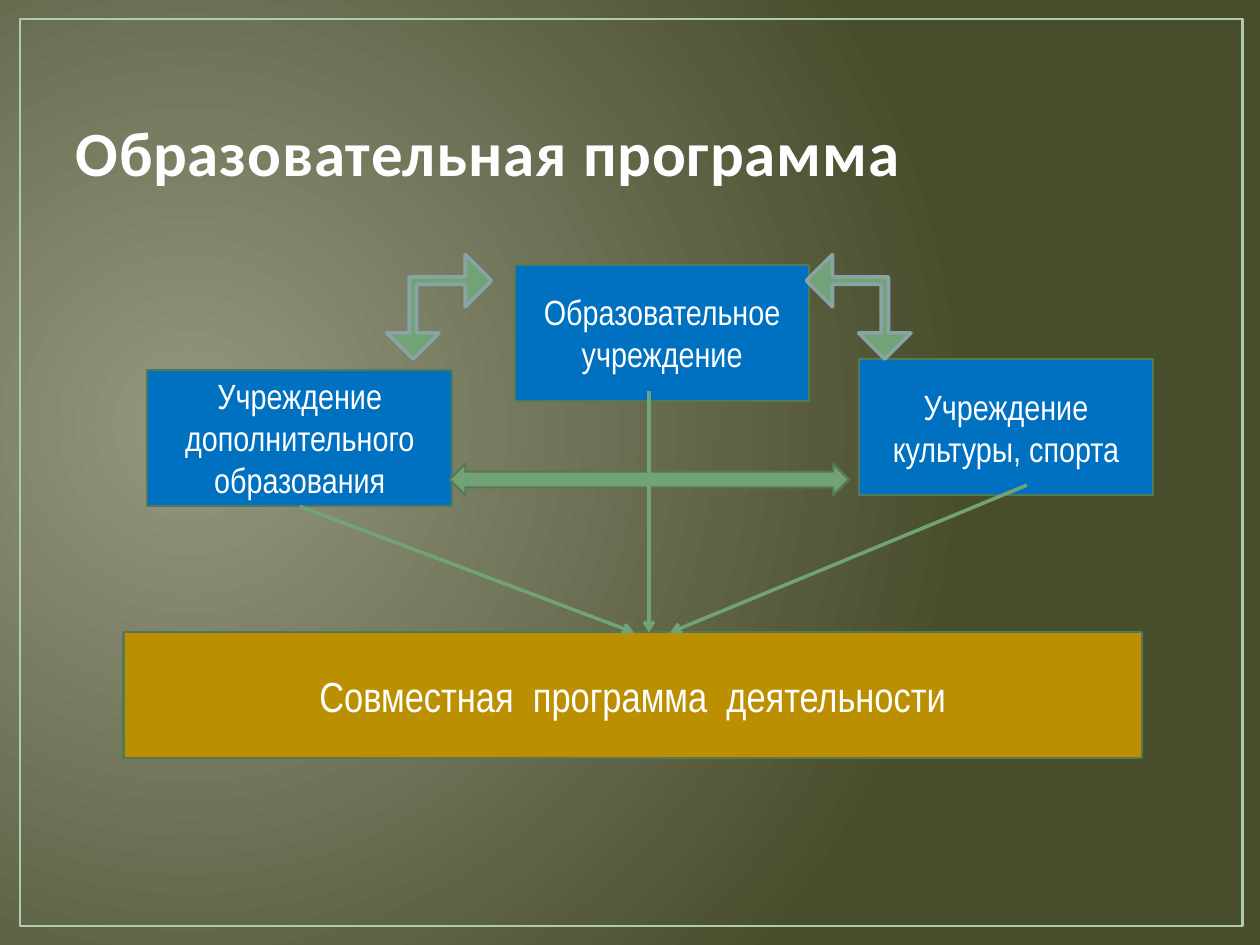
from lxml.etree import SubElement
from pptx import Presentation
from pptx.dml.color import RGBColor
from pptx.enum.shapes import MSO_CONNECTOR, MSO_SHAPE
from pptx.enum.text import MSO_ANCHOR, MSO_AUTO_SIZE, PP_ALIGN
from pptx.oxml import parse_xml
from pptx.oxml.ns import nsdecls, qn
from pptx.util import Pt

WHITE = RGBColor(0xFF, 0xFF, 0xFF)
SNOW = RGBColor(0xFF, 0xFE, 0xFE)
BLUE = RGBColor(0x00, 0x70, 0xC0)
GOLD = RGBColor(0xBC, 0x8F, 0x00)
GREEN = RGBColor(0x72, 0xA3, 0x76)
EDGE = RGBColor(0x54, 0x79, 0x57)
STEEL = RGBColor(0x89, 0xA4, 0xA7)
MINT = RGBColor(0xB0, 0xCC, 0xB0)

TITLE = "Образовательная программа"
# text, (left, top, width, height), fill, text size
BOXES = [
    ("Образовательное учреждение", (294.5, 151.2, 167.8, 77.8), BLUE, 20),
    ("Учреждение культуры, спорта", (491, 205.2, 167.8, 77.8), BLUE, 20),
    ("Учреждение дополнительного образования", (84.2, 211.3, 174.2, 77.8), BLUE, 20),
    ("Совместная  программа  деятельности", (70.6, 361.4, 581.8, 72), GOLD, 24),
]
# left, rotation
ELBOWS = [(460.8, 270), (221, 180)]
ELBOW_TOP, ELBOW_SIDE = 145.4, 59.8
BRIDGE = (257, 265, 228.2, 18)
# start x, start y, end x; all end on the top edge of the gold box
RAYS = [(171.4, 289.4, 362.2), (370.8, 223.2, 370.8), (586.8, 277.2, 383)]
RAY_END = 361.4

BACK = f"""<a:gradFill {nsdecls('a')} rotWithShape="1"><a:gsLst>
<a:gs pos="0"><a:srgbClr val="949780"/></a:gs>
<a:gs pos="100000"><a:srgbClr val="484D2C"/></a:gs></a:gsLst>
<a:path path="circle"><a:fillToRect l="15000" t="50000" r="85000" b="60000"/></a:path>
</a:gradFill>"""
OUTLINE = f"""<a:ln {nsdecls('a')} w="13335"><a:solidFill>
<a:srgbClr val="375439"/></a:solidFill></a:ln>"""


def style(obj, **values):
    for name, value in values.items():
        setattr(obj, name, value)


def add_shape(slide, kind, place, fill, edge, width):
    shape = slide.shapes.add_shape(kind, *map(Pt, place))
    shape.shadow.inherit = False
    if fill is None:
        shape.fill.background()
    else:
        shape.fill.solid()
        shape.fill.fore_color.rgb = fill
    shape.line.color.rgb = edge
    shape.line.width = Pt(width)
    return shape


def add_box(slide, text, place, fill, size):
    frame = add_shape(slide, MSO_SHAPE.RECTANGLE, place, fill, EDGE, 1.25).text_frame
    style(frame, text=text, word_wrap=True, vertical_anchor=MSO_ANCHOR.MIDDLE)
    para = frame.paragraphs[0]
    para.alignment = PP_ALIGN.CENTER
    font = para.runs[0].font
    style(font, name="Arial Narrow", size=Pt(size))
    font.color.rgb = WHITE


def add_ray(slide, x, y, end):
    ray = slide.shapes.add_connector(
        MSO_CONNECTOR.STRAIGHT, Pt(x), Pt(y), Pt(end), Pt(RAY_END))
    ray.line.color.rgb = GREEN
    ray.line.width = Pt(2)
    SubElement(ray.line._get_or_add_ln(), qn("a:tailEnd"), type="arrow")
    SubElement(ray._element.spPr, qn("a:effectLst"))


def add_elbow(slide, left, turn):
    place = (left, ELBOW_TOP, ELBOW_SIDE, ELBOW_SIDE)
    elbow = add_shape(slide, MSO_SHAPE.LEFT_UP_ARROW, place, GREEN, STEEL, 2)
    elbow.rotation = turn
    elbow.adjustments[0] = 0.07


def set_title(slide):
    title = slide.shapes.title
    style(title, left=Pt(36), top=Pt(21.6), width=Pt(648), height=Pt(90))
    frame = title.text_frame
    style(frame, text=TITLE, word_wrap=True, auto_size=MSO_AUTO_SIZE.NONE,
          vertical_anchor=MSO_ANCHOR.BOTTOM)
    para = frame.paragraphs[0]
    para.alignment = PP_ALIGN.LEFT
    font = para.runs[0].font
    style(font, name="Calibri", size=Pt(36), bold=True)
    font.color.rgb = SNOW
    props = para.runs[0]._r.get_or_add_rPr()
    props.set("spc", "50")
    props.insert(0, parse_xml(OUTLINE))


def main():
    deck = Presentation()
    style(deck, slide_width=Pt(720), slide_height=Pt(540))
    slide = deck.slides.add_slide(deck.slide_layouts[5])
    back = slide.background.fill
    back.solid()
    solid = slide._element.find(".//" + qn("p:bgPr")).find(qn("a:solidFill"))
    solid.getparent().replace(solid, parse_xml(BACK))

    add_shape(slide, MSO_SHAPE.RECTANGLE, (11.5, 10.8, 698.4, 518.4), None, MINT, 1.5)
    set_title(slide)
    for box in BOXES:
        add_box(slide, *box)
    add_ray(slide, *RAYS[0])
    for elbow in ELBOWS:
        add_elbow(slide, *elbow)
    add_shape(slide, MSO_SHAPE.LEFT_RIGHT_ARROW, BRIDGE, GREEN, EDGE, 1.25)
    for ray in RAYS[1:]:
        add_ray(slide, *ray)
    deck.save("out.pptx")


if __name__ == "__main__":
    main()
